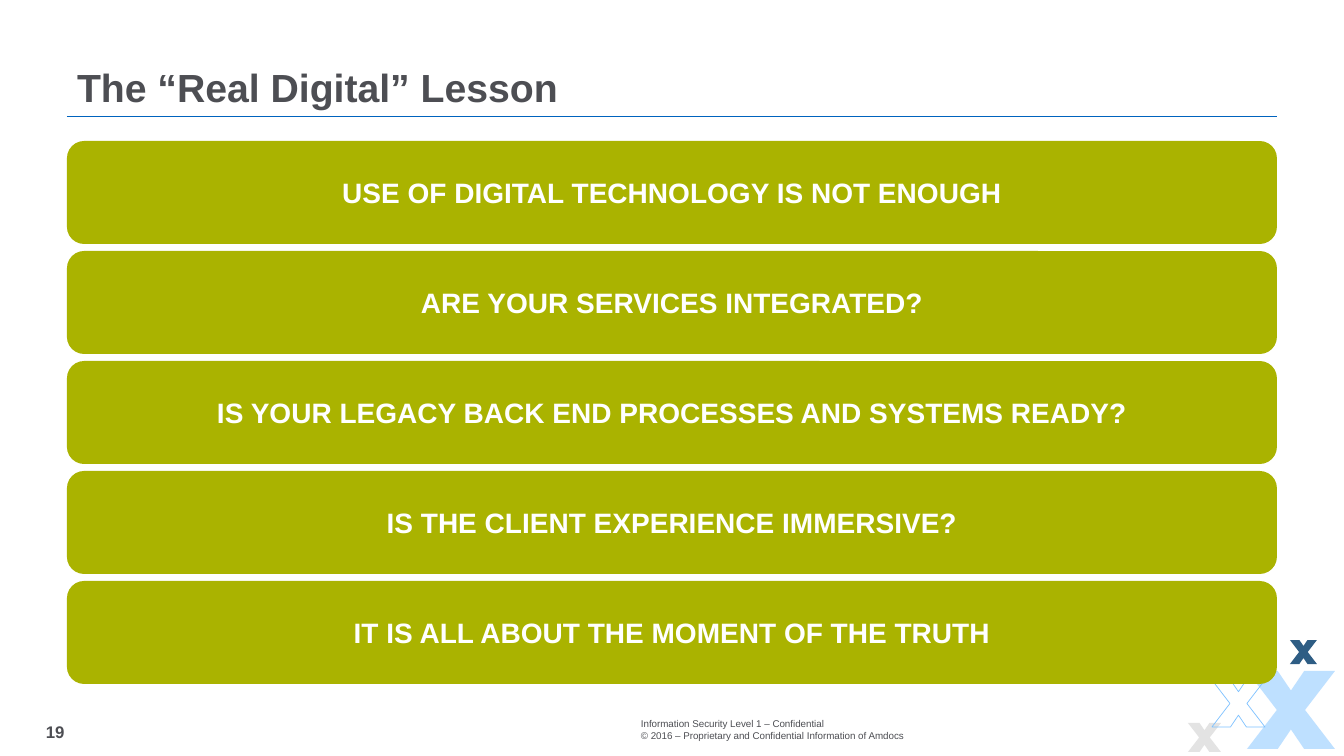
from lxml.etree import SubElement
from pptx import Presentation
from pptx.dml.color import RGBColor
from pptx.enum.shapes import MSO_CONNECTOR, MSO_SHAPE
from pptx.enum.text import MSO_ANCHOR, PP_ALIGN
from pptx.oxml.ns import qn
from pptx.util import Pt

SCALE = 914400 / 100.8
GREY, BLUE, LIME, SKY = "4D4E53", "0063BE", "AAB300", "7FC2FF"

# Corners of the X, as shares of its width and height
CROSS = [(0, 0), (.35, 0), (.5, .25), (.65, 0), (1, 0), (.66, .5),
         (1, 1), (.65, 1), (.5, .75), (.35, 1), (0, 1), (.34, .5)]

LESSONS = [
    "USE OF DIGITAL TECHNOLOGY IS NOT ENOUGH",
    "ARE YOUR SERVICES INTEGRATED?",
    "IS YOUR LEGACY BACK END PROCESSES AND SYSTEMS READY?",
    "IS THE CLIENT EXPERIENCE IMMERSIVE?",
    "IT IS ALL ABOUT THE MOMENT OF THE TRUTH",
]
FOOTER = [
    "Information Security Level 1 – Confidential",
    "© 2016 – Proprietary and Confidential Information of Amdocs",
]


def px(size):
    return round(size * SCALE)


def rgb(code):
    return RGBColor.from_string(code)


class Page:
    font = "Arial"

    def __init__(self, deck):
        self.slide = deck.slides.add_slide(deck.slide_layouts[5])
        self.shapes = self.slide.shapes

    def label(self, shape, lines, size, color, bold=False, wrap=True,
              anchor=MSO_ANCHOR.MIDDLE, **form):
        """Fill a shape with paragraphs; form holds paragraph settings."""
        frame = shape.text_frame
        frame.word_wrap = wrap
        frame.vertical_anchor = anchor
        frame.text = "\n".join(lines)
        style = {"name": self.font, "size": Pt(size), "bold": bold}
        for para in frame.paragraphs:
            for key, value in form.items():
                setattr(para, key, value)
            for key, value in style.items():
                setattr(para.font, key, value)
            para.font.color.rgb = rgb(color)

    def title(self, box, text):
        shape = self.shapes.title
        for key, value in zip(("left", "top", "width", "height"), box):
            setattr(shape, key, px(value))
        self.label(shape, [text], 28, GREY, True, anchor=MSO_ANCHOR.BOTTOM,
                   alignment=PP_ALIGN.LEFT, line_spacing=.9)

    def text(self, box, lines, size, **form):
        shape = self.shapes.add_textbox(*map(px, box))
        self.label(shape, lines, size, GREY, **form)

    def rule(self, left, top, right):
        line = self.shapes.add_connector(
            MSO_CONNECTOR.STRAIGHT, *map(px, (left, top, right, top)))
        line.line.color.rgb = rgb(BLUE)
        line.line.width = Pt(.5)
        SubElement(line._element.spPr, qn("a:effectLst"))

    def bar(self, box, text):
        shape = self.shapes.add_shape(
            MSO_SHAPE.ROUNDED_RECTANGLE, *map(px, box))
        shape.shadow.inherit = False
        shape.fill.solid()
        shape.fill.fore_color.rgb = rgb(LIME)
        shape.line.fill.background()
        self.label(shape, [text], 20, "FFFFFF", True,
                   alignment=PP_ALIGN.CENTER)

    def cross(self, box, color, alpha=None):
        """Draw an X, filled at alpha percent or as an outline if None."""
        left, top, width, height = box
        first, *rest = [(px(left + x * width), px(top + y * height))
                        for x, y in CROSS]
        pen = self.shapes.build_freeform(*first)
        pen.add_line_segments(rest, close=True)
        shape = pen.convert_to_shape()
        shape.shadow.inherit = False
        if alpha is None:
            shape.fill.background()
            shape.line.color.rgb = rgb(color)
            shape.line.width = Pt(.5)
            return
        shape.line.fill.background()
        shape.fill.solid()
        shape.fill.fore_color.rgb = rgb(color)
        tint = shape._element.spPr.find(".//" + qn("a:srgbClr"))
        SubElement(tint, qn("a:alpha"), val=str(alpha * 1000))


def main():
    deck = Presentation()
    deck.slide_width, deck.slide_height = px(1344), px(756)
    page = Page(deck)
    page.title((67, 33, 1210, 83), "The “Real Digital” Lesson")
    page.text((36, 717, 80, 30), ["19"], 12, bold=True)
    page.text((631, 712, 288, 34), FOOTER, 7, wrap=False,
              anchor=MSO_ANCHOR.BOTTOM)
    page.cross((1247, 671, 88, 78), SKY, 50)
    page.cross((1290, 640, 27, 24), "003A69", 82)
    page.cross((1188, 723, 33, 29), "AFAFAF", 35)
    page.cross((1212, 680, 53, 47), SKY)
    page.rule(67, 116, 1277)
    for row, lesson in enumerate(LESSONS):
        page.bar((67, 141 + 110 * row, 1210, 103), lesson)
    deck.save("out.pptx")


if __name__ == "__main__":
    main()
